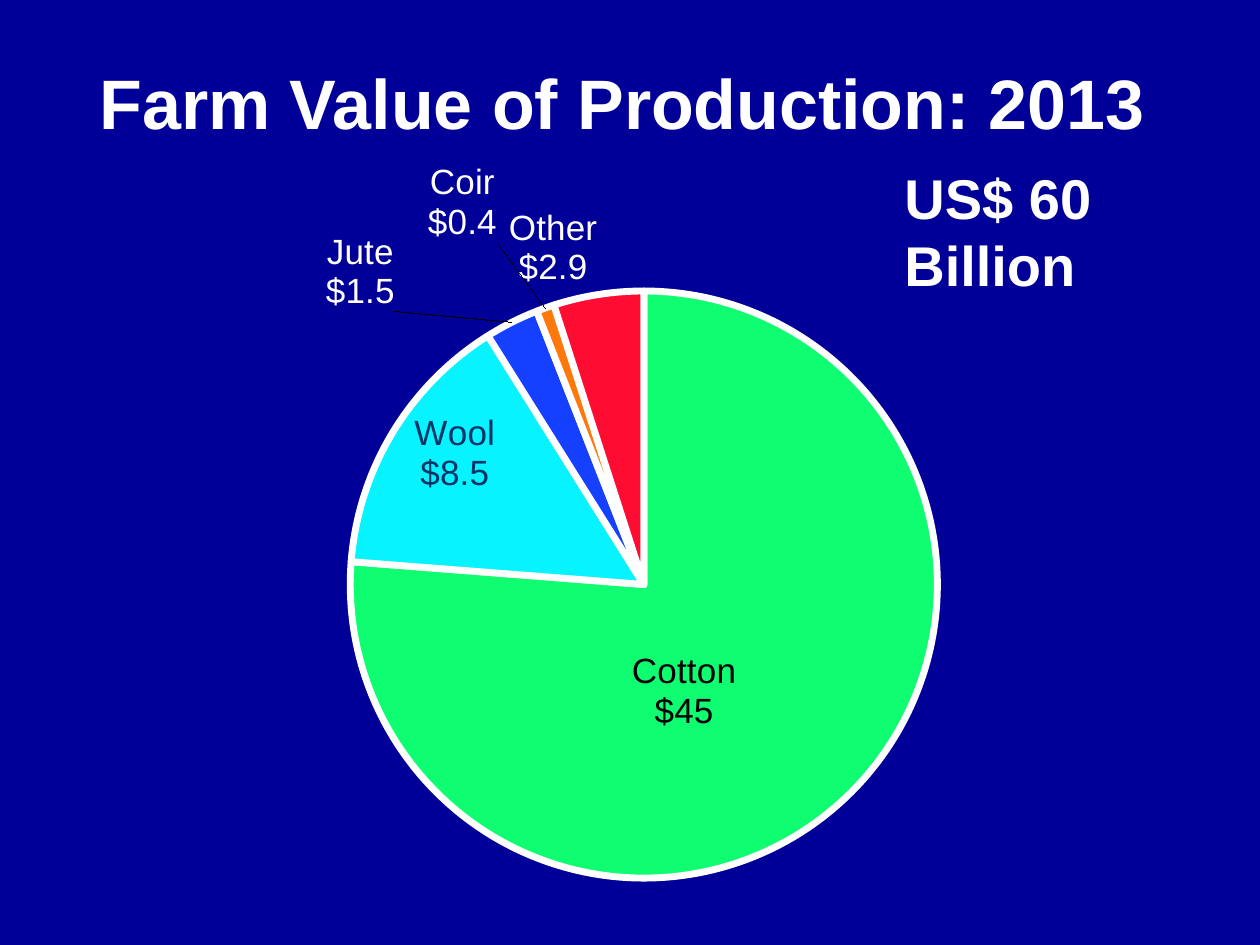
from math import cos, pi, sin

from pptx import Presentation
from pptx.chart.data import CategoryChartData
from pptx.dml.color import RGBColor
from pptx.enum.chart import XL_CHART_TYPE, XL_LABEL_POSITION
from pptx.enum.text import MSO_ANCHOR, MSO_AUTO_SIZE, PP_ALIGN
from pptx.oxml import parse_xml
from pptx.oxml.ns import qn
from pptx.util import Inches, Pt

PIE = XL_CHART_TYPE.PIE
CENTER_LABEL = XL_LABEL_POSITION.CENTER
LEFT, TOP = PP_ALIGN.LEFT, MSO_ANCHOR.TOP
NO_AUTOFIT = MSO_AUTO_SIZE.NONE
FONT = "Arial"
WHITE, NAVY = "FFFFFF", "000099"
NAMESPACES = (
    'xmlns:c="http://schemas.openxmlformats.org/drawingml/2006/chart" '
    'xmlns:a="http://schemas.openxmlformats.org/drawingml/2006/main"'
)

TITLE_BOX = (0.69, 0.42, 9.33, 0.77)
TOTAL_BOX = (7.08, 1.25, 2.67, 1.18)
CHART_BOX = (-0.97, 0.58, 12.63, 7.68)
PIE_CENTER, PIE_RADIUS = (5.11, 4.64), 2.33

# name, share in percent, farm value, slice, label and leader colours, label centre
FIBERS = [
    ("Cotton", 77, "$45", "0FFE71", "000000", "000000", (5.43, 5.49)),
    ("Wool", 15, "$8.5", "06F3FF", "003366", "003366", (3.61, 3.60)),
    ("Jute", 3, "$1.5", "1640FF", WHITE, WHITE, (2.86, 2.16)),
    ("Coir", 1, "$0.4", "FE780B", WHITE, NAVY, (3.67, 1.61)),
    ("Other", 5, "$2.9", "FF0C33", WHITE, NAVY, (4.39, 1.97)),
]


def color(hex_string):
    """Return the colour for a hex string."""
    return RGBColor.from_string(hex_string)


def format_font(font, size, hex_string, bold):
    """Set the typeface, size, weight and colour of a font."""
    values = {"name": FONT, "size": Pt(size), "bold": bold}
    for name, value in values.items():
        setattr(font, name, value)
    font.color.rgb = color(hex_string)


def place(shape, box):
    """Move a shape to a box given in inches."""
    for name, value in zip(("left", "top", "width", "height"), box):
        setattr(shape, name, Inches(value))


def fill_heading(shape, text, size):
    """Write bold white text into a shape from its top left corner."""
    frame = shape.text_frame
    frame.text = text
    values = {"word_wrap": True, "auto_size": NO_AUTOFIT, "vertical_anchor": TOP}
    for name, value in values.items():
        setattr(frame, name, value)
    paragraph = frame.paragraphs[0]
    paragraph.alignment = LEFT
    format_font(paragraph.runs[0].font, size, WHITE, True)


def add_title(slide, box):
    """Place the slide title."""
    place(slide.shapes.title, box)
    fill_heading(slide.shapes.title, "Farm Value of Production: 2013", 40)


def add_total(slide, box):
    """Place the total value of all fibers."""
    shape = slide.shapes.add_textbox(*map(Inches, box))
    fill_heading(shape, "US$ 60 Billion", 32)


def manual_layout(**values):
    """Build a chart layout element from its settings."""
    settings = "".join(f'<c:{name} val="{value}"/>' for name, value in values.items())
    return parse_xml(
        f"<c:layout {NAMESPACES}><c:manualLayout>{settings}</c:manualLayout></c:layout>"
    )


def place_plot(chart, box):
    """Fix the pie inside the chart and clear the chart background."""
    left, top, width, height = box
    center_x, center_y = PIE_CENTER
    plot_area = chart.element.find(".//" + qn("c:plotArea"))
    for layout in plot_area.findall(qn("c:layout")):
        plot_area.remove(layout)
    plot_area.insert(0, manual_layout(
        layoutTarget="inner", xMode="edge", yMode="edge",
        x=(center_x - PIE_RADIUS - left) / width,
        y=(center_y - PIE_RADIUS - top) / height,
        w=2 * PIE_RADIUS / width, h=2 * PIE_RADIUS / height,
    ))
    chart.element.find(qn("c:chart")).addnext(parse_xml(
        f"<c:spPr {NAMESPACES}><a:noFill/><a:ln><a:noFill/></a:ln></c:spPr>"
    ))


def format_slice(point, fiber):
    """Color one slice and write its label."""
    name, _, value, slice_color, label_color, leader_color, _ = fiber
    point.format.fill.solid()
    point.format.fill.fore_color.rgb = color(slice_color)
    point.format.line.color.rgb = color(WHITE)
    point.format.line.width = Pt(3.93)
    label = point.data_label
    format_font(label.font, 20, leader_color, False)
    label.text_frame.text = f"{name}\n{value}"
    for paragraph in label.text_frame.paragraphs:
        format_font(paragraph.runs[0].font, 20, label_color, False)
    label.position = CENTER_LABEL


def move_labels(chart, box):
    """Shift each label from the middle of its slice to its own centre."""
    total = sum(fiber[1] for fiber in FIBERS)
    start = 0
    labels = chart.element.findall(".//" + qn("c:dLbl"))
    for label, (_, share, *_, (target_x, target_y)) in zip(labels, FIBERS):
        angle = 2 * pi * (start + share / 2) / total
        start += share
        middle_x = PIE_CENTER[0] + PIE_RADIUS / 2 * sin(angle)
        middle_y = PIE_CENTER[1] - PIE_RADIUS / 2 * cos(angle)
        label.find(qn("c:idx")).addnext(manual_layout(
            x=(target_x - middle_x) / box[2], y=(target_y - middle_y) / box[3]
        ))


def add_pie(slide, box):
    """Place the pie chart of farm value by fiber behind the text."""
    data = CategoryChartData()
    data.categories = [fiber[0] for fiber in FIBERS]
    data.add_series("Series 1", [fiber[1] for fiber in FIBERS])
    frame = slide.shapes.add_chart(PIE, *map(Inches, box), data)
    slide.shapes.element.insert(2, frame.element)
    chart = frame.chart
    chart.has_title = chart.has_legend = False
    format_font(chart.font, 20, WHITE, False)
    plot = chart.plots[0]
    plot.vary_by_categories = True
    for index, fiber in enumerate(FIBERS):
        format_slice(plot.series[0].points[index], fiber)
    place_plot(chart, box)
    move_labels(chart, box)


def main():
    """Build and save the presentation."""
    presentation = Presentation()
    presentation.slide_width, presentation.slide_height = Inches(10), Inches(7.5)
    slide = presentation.slides.add_slide(presentation.slide_layouts[5])
    slide.background.fill.solid()
    slide.background.fill.fore_color.rgb = color(NAVY)
    add_pie(slide, CHART_BOX)
    add_title(slide, TITLE_BOX)
    add_total(slide, TOTAL_BOX)
    presentation.save("out.pptx")


if __name__ == "__main__":
    main()
